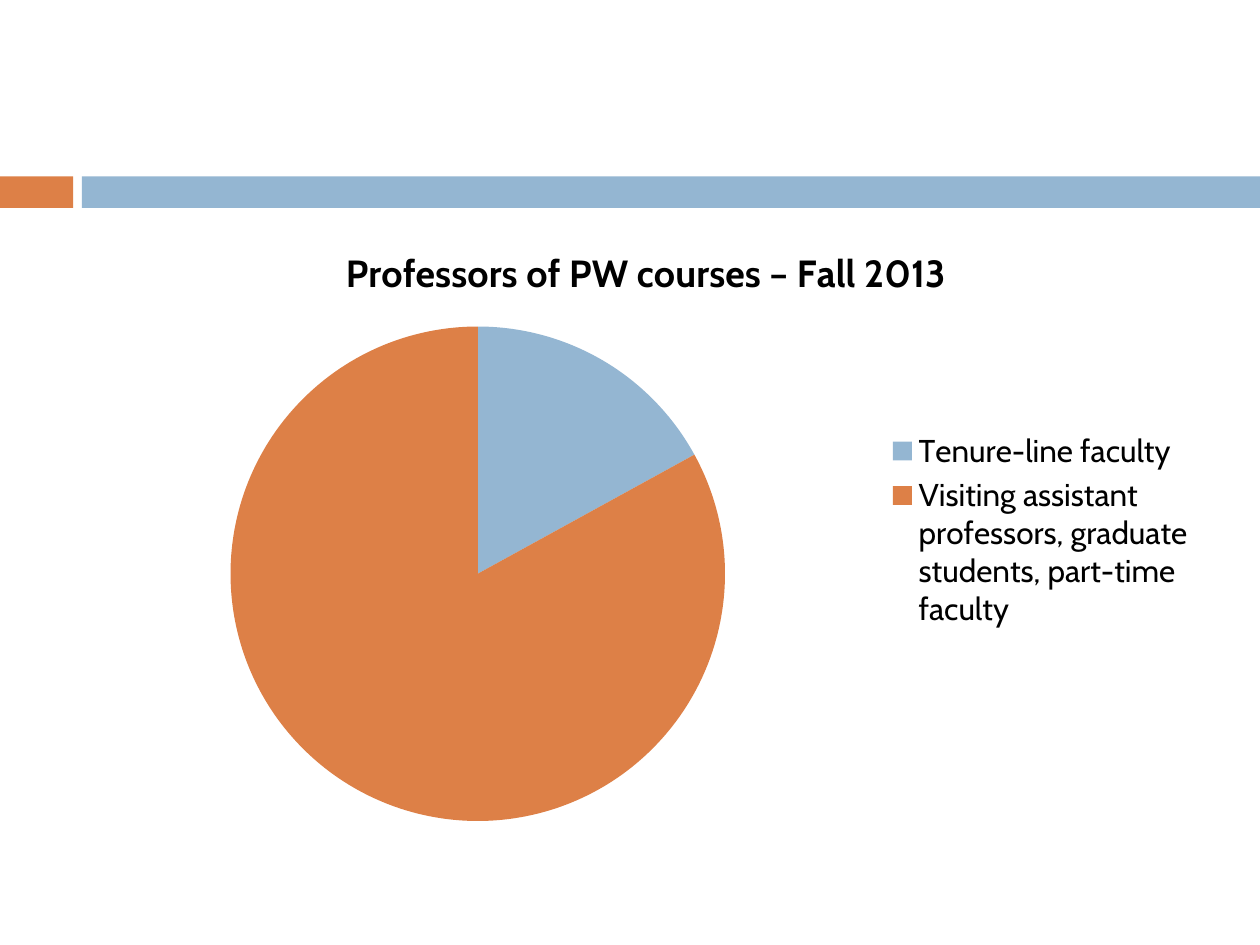
"""Build a slide with a two-colour band and a pie chart of who teaches PW courses."""
from lxml import etree
from pptx import Presentation
from pptx.chart.data import CategoryChartData
from pptx.dml.color import RGBColor
from pptx.enum.chart import XL_CHART_TYPE as ChartType, XL_LEGEND_POSITION as LegendPos
from pptx.enum.shapes import MSO_SHAPE as Shape
from pptx.oxml.ns import qn
from pptx.util import Inches, Pt

BLUE = RGBColor(0x94, 0xB6, 0xD2)
ORANGE = RGBColor(0xDD, 0x80, 0x47)
BLACK = RGBColor(0, 0, 0)
FONT = "Cabin"

TITLE = "Professors of PW courses – Fall 2013"
SLICES = [
    ("Tenure-line faculty", 17, BLUE),
    ("Visiting assistant professors, graduate students, part-time faculty", 83, ORANGE),
]
BAND_TOP, BAND_HEIGHT = 1.4, 0.25
BANDS = [(0, 0.58, ORANGE), (0.65, 9.35, BLUE)]
CHART_BOX = (0.67, 1.75, 8.92, 4.92)
PIE_SHARE = {"x": 0.13, "y": 0.17, "w": 0.44, "h": 0.8}


def add_band(slide, left, width, color):
    s = slide.shapes.add_shape(
        Shape.RECTANGLE, *map(Inches, (left, BAND_TOP, width, BAND_HEIGHT)))
    s.shadow.inherit = False
    s.fill.solid()
    s.fill.fore_color.rgb = color
    s.line.fill.background()


def place_plot(chart, shares):
    area = chart.element.find(".//" + qn("c:plotArea"))
    layout = area.find(qn("c:layout"))
    if layout is None:
        layout = etree.Element(qn("c:layout"))
        area.insert(0, layout)
    manual = etree.SubElement(layout, qn("c:manualLayout"))
    settings = {"layoutTarget": "inner", "xMode": "edge", "yMode": "edge", **shares}
    for name, value in settings.items():
        etree.SubElement(manual, qn("c:" + name)).set("val", str(value))


def add_pie(slide):
    data = CategoryChartData()
    data.categories = [name for name, _, _ in SLICES]
    data.add_series("Series 1", [value for _, value, _ in SLICES])
    chart = slide.shapes.add_chart(
        ChartType.PIE, *map(Inches, CHART_BOX), data).chart
    chart.font.name = FONT
    chart.font.size = Pt(18)
    chart.font.color.rgb = BLACK

    chart.has_title = True
    tf = chart.chart_title.text_frame
    tf.text = TITLE
    font = tf.paragraphs[0].font
    font.name, font.size, font.bold = FONT, Pt(21.6), True
    font.color.rgb = BLACK
    chart.chart_title.include_in_layout = False

    chart.has_legend = True
    chart.legend.position = LegendPos.RIGHT
    chart.legend.include_in_layout = False

    plot = chart.plots[0]
    plot.vary_by_categories = True
    for i, (_, _, color) in enumerate(SLICES):
        fill = plot.series[0].points[i].format.fill
        fill.solid()
        fill.fore_color.rgb = color
    place_plot(chart, PIE_SHARE)


def main():
    prs = Presentation()
    prs.slide_width, prs.slide_height = Inches(10), Inches(7.5)
    slide = prs.slides.add_slide(prs.slide_layouts[6])
    for band in BANDS:
        add_band(slide, *band)
    add_pie(slide)
    prs.save("out.pptx")


if __name__ == "__main__":
    main()
